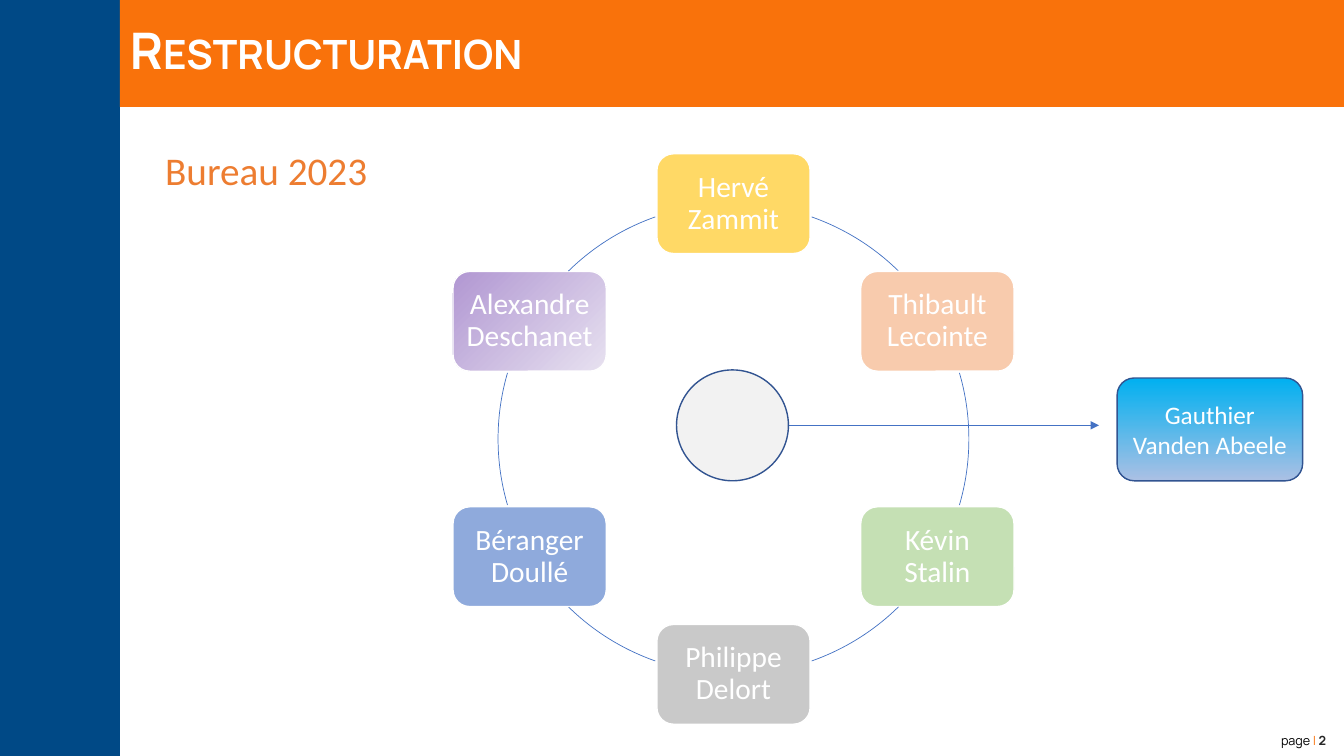
import math
from dataclasses import dataclass

import pptx
import pptx.dml.color
import pptx.enum.shapes
import pptx.enum.text
import pptx.oxml
import pptx.oxml.ns
import pptx.util
from pptx.util import Inches

SHAPES = pptx.enum.shapes.MSO_SHAPE
ALIGN = pptx.enum.text.PP_ALIGN
ANCHOR = pptx.enum.text.MSO_ANCHOR


@dataclass(frozen=True)
class Theme:
    navy: str = "004986"
    orange: str = "F9720B"
    heading: str = "ED7D31"
    white: str = "FFFFFF"
    black: str = "000000"
    dark: str = "262626"
    ring: str = "4472C4"
    outline: str = "325491"
    hub: str = "F2F2F2"
    yellow: str = "FFD966"
    peach: str = "F8CBAD"
    green: str = "C5E0B4"
    grey: str = "C9C9C9"
    blue: str = "8FAADC"
    purple: tuple = ("B197D2", "E7E1F0")
    sky: tuple = ("00B0F0", "ABC0E4")
    title_font: str = "Manrope"
    body_font: str = "Calibri"
    title_size: int = 36
    heading_size: int = 28
    member_size: int = 21
    guest_size: int = 18
    footer_size: int = 9


THEME = Theme()
MEMBERS = [
    ("Hervé Zammit", THEME.yellow),
    ("Thibault Lecointe", THEME.peach),
    ("Kévin Stalin", THEME.green),
    ("Philippe Delort", THEME.grey),
    ("Béranger Doullé", THEME.blue),
    ("Alexandre Deschanet", THEME.purple),
]
ARCS = [(289.4, 314.5), (343.7, 16.3), (45.5, 70.6),
        (109.4, 134.5), (163.7, 196.3), (225.5, 250.6)]


def rgb(color):
    return pptx.dml.color.RGBColor.from_string(color)


def write_text(shape, text, size, color, font=THEME.body_font, align=ALIGN.LEFT,
               anchor=ANCHOR.MIDDLE, spacing=None, inset=0.1, bold=False, small_caps=False):
    frame = shape.text_frame
    frame.word_wrap = True
    frame.vertical_anchor = anchor
    frame.margin_left = frame.margin_right = Inches(inset)
    frame.margin_top = frame.margin_bottom = Inches(0.05)
    paragraph = frame.paragraphs[0]
    paragraph.alignment = align
    if spacing:
        paragraph.line_spacing = spacing
    parts = [(text, color, bold)] if isinstance(text, str) else text
    for content, part_color, part_bold in parts:
        run = paragraph.add_run()
        run.text = content
        run.font.name = font
        run.font.size = pptx.util.Pt(size)
        run.font.bold = part_bold
        run.font.color.rgb = rgb(part_color)
        if small_caps:
            run.font._element.set("cap", "small")


def fill_gradient(shape, colors, radial):
    shape.fill.gradient()
    for stop, color in zip(shape.fill.gradient_stops, colors):
        stop.color.rgb = rgb(color)
    if not radial:
        shape.fill.gradient_angle = 270
        return
    linear = shape._element.spPr.find(".//" + pptx.oxml.ns.qn("a:lin"))
    circle = pptx.oxml.parse_xml(
        f'<a:path {pptx.oxml.ns.nsdecls("a")} path="circle">'
        '<a:fillToRect r="100000" b="100000"/></a:path>')
    linear.getparent().replace(linear, circle)


def add_block(slide, kind, left, top, width, height, fill=None, line=None,
              line_width=1, radial=False):
    shape = slide.shapes.add_shape(kind, Inches(left), Inches(top), Inches(width), Inches(height))
    shape.shadow.inherit = False
    if fill is None:
        shape.fill.background()
    elif isinstance(fill, tuple):
        fill_gradient(shape, fill, radial)
    else:
        shape.fill.solid()
        shape.fill.fore_color.rgb = rgb(fill)
    if line is None:
        shape.line.fill.background()
    else:
        shape.line.color.rgb = rgb(line)
        shape.line.width = pptx.util.Pt(line_width)
    return shape


def add_text_box(slide, left, top, width, height, text, size, color, **text_format):
    shape = slide.shapes.add_textbox(Inches(left), Inches(top), Inches(width), Inches(height))
    write_text(shape, text, size, color, **text_format)


def add_arrow(slide, left, top, length):
    arrow = slide.shapes.add_connector(
        pptx.enum.shapes.MSO_CONNECTOR.STRAIGHT,
        Inches(left), Inches(top), Inches(left + length), Inches(top))
    arrow.line.color.rgb = rgb(THEME.ring)
    arrow.line.width = pptx.util.Pt(0.5)
    namespace = pptx.oxml.ns.nsdecls("a")
    arrow.line._get_or_add_ln().append(
        pptx.oxml.parse_xml(f'<a:tailEnd {namespace} type="triangle"/>'))
    arrow._element.spPr.append(pptx.oxml.parse_xml(f"<a:effectLst {namespace}/>"))


def add_frame(slide, width, height, sidebar=1.19, banner=1.06):
    add_block(slide, SHAPES.RECTANGLE, 0, 0, sidebar, height, THEME.navy)
    add_text_box(slide, width - 0.96, height - 0.31, 0.88, 0.31,
                 [("page ", THEME.black, False), ("| ", THEME.orange, False),
                  ("2", THEME.dark, True)],
                 THEME.footer_size, THEME.black, font=THEME.title_font, align=ALIGN.RIGHT)
    title = add_block(slide, SHAPES.RECTANGLE, sidebar, 0, width - sidebar, banner, THEME.orange)
    write_text(title, "Restructuration", THEME.title_size, THEME.white,
               font=THEME.title_font, spacing=0.9, bold=True, small_caps=True)


def add_member_ring(slide, left, top, diameter, box_width=1.52, box_height=0.99):
    radius = diameter / 2
    for index, ((name, fill), (start, end)) in enumerate(zip(MEMBERS, ARCS)):
        angle = math.radians(index * 360 / len(MEMBERS) - 90)
        box_left = left + radius * (1 + math.cos(angle)) - box_width / 2
        box_top = top + radius * (1 + math.sin(angle)) - box_height / 2
        box = add_block(slide, SHAPES.ROUNDED_RECTANGLE, box_left, box_top,
                        box_width, box_height, fill, THEME.white, radial=True)
        write_text(box, name, THEME.member_size, THEME.white,
                   align=ALIGN.CENTER, spacing=0.9, inset=0.04)
        arc = add_block(slide, SHAPES.ARC, left, top, diameter, diameter,
                        line=THEME.ring, line_width=0.5)
        arc.adjustments[0] = start * 0.6
        arc.adjustments[1] = end * 0.6


def add_guest(slide, left, top, width, height):
    hub_size = 1.11
    add_arrow(slide, left + 0.55, top + 0.55, 3.64)
    add_block(slide, SHAPES.OVAL, left, top, hub_size, height, THEME.hub, THEME.outline)
    box_width = 1.84
    guest = add_block(slide, SHAPES.ROUNDED_RECTANGLE, left + width - box_width,
                      top + 0.08, box_width, height - 0.08, THEME.sky, THEME.outline)
    write_text(guest, "Gauthier Vanden Abeele", THEME.guest_size, THEME.white,
               align=ALIGN.CENTER, inset=0.08)


def main():
    width, height = 13.33, 7.5
    presentation = pptx.Presentation()
    presentation.slide_width = Inches(width)
    presentation.slide_height = Inches(height)
    slide = presentation.slides.add_slide(presentation.slide_layouts[6])
    add_frame(slide, width, height)
    add_member_ring(slide, 4.94, 2.02, 4.67)
    add_guest(slide, 6.71, 3.67, 6.21, 1.1)
    add_text_box(slide, 1.54, 1.4, 3.06, 0.57, "Bureau 2023",
                 THEME.heading_size, THEME.heading, anchor=ANCHOR.TOP)
    presentation.save("out.pptx")


if __name__ == "__main__":
    main()
